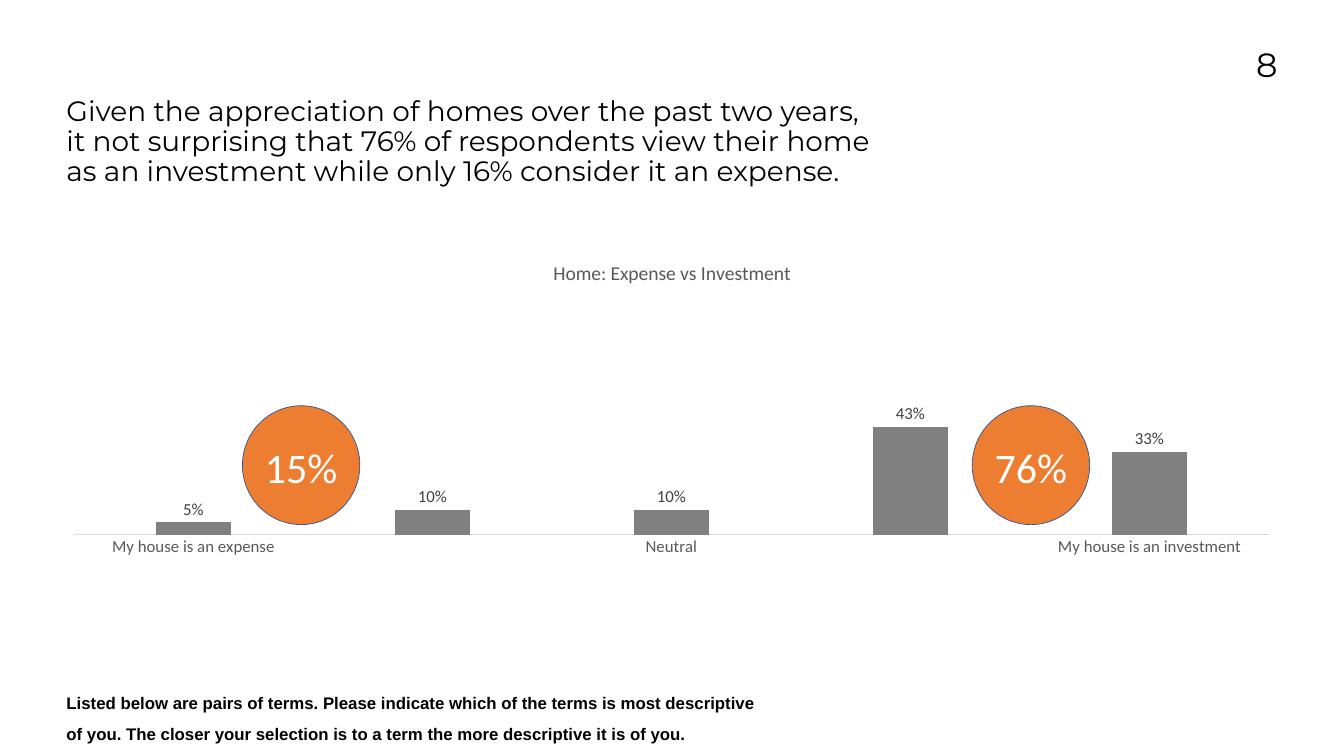
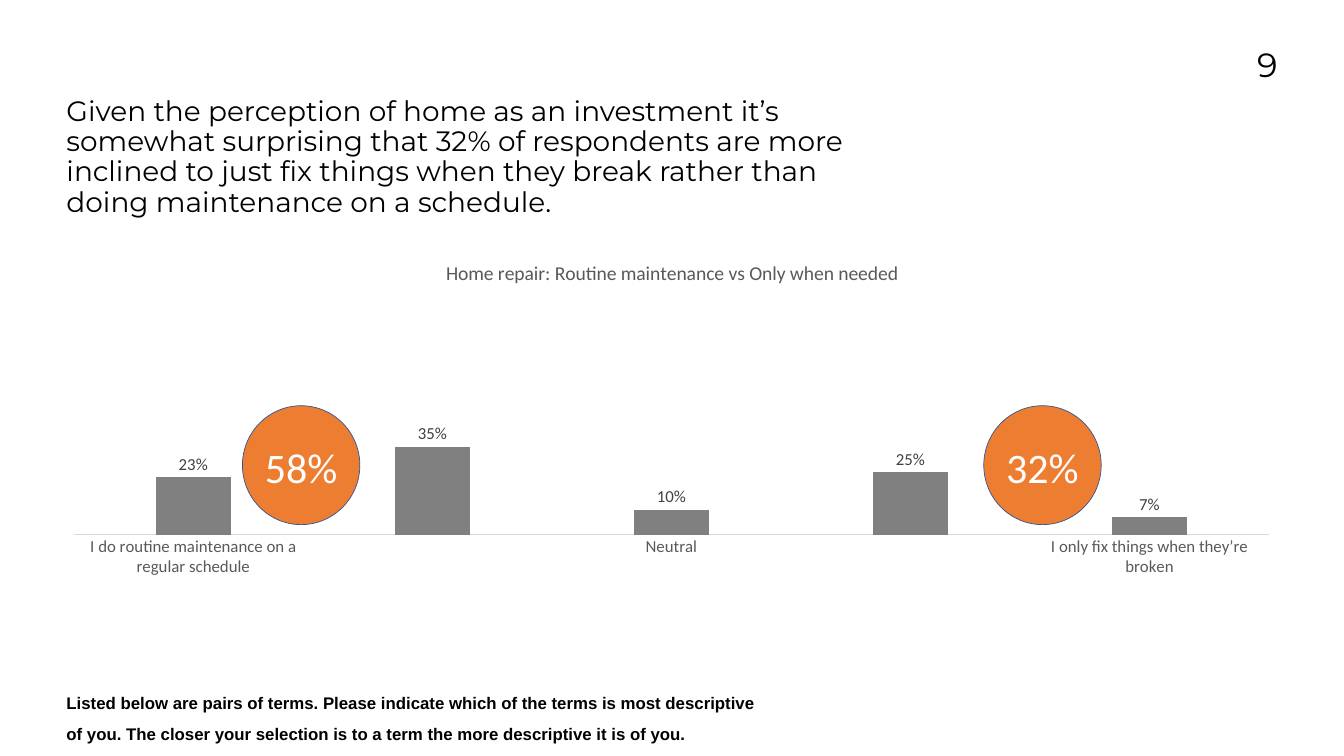
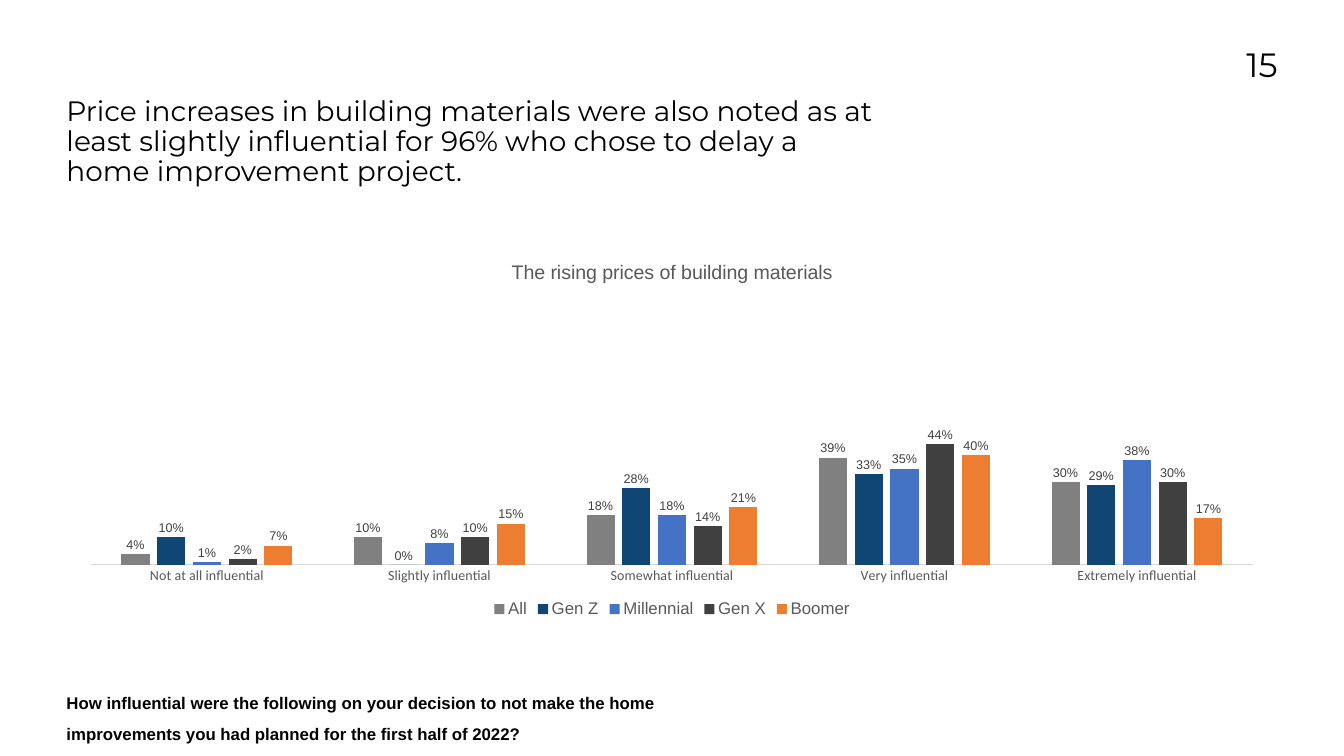
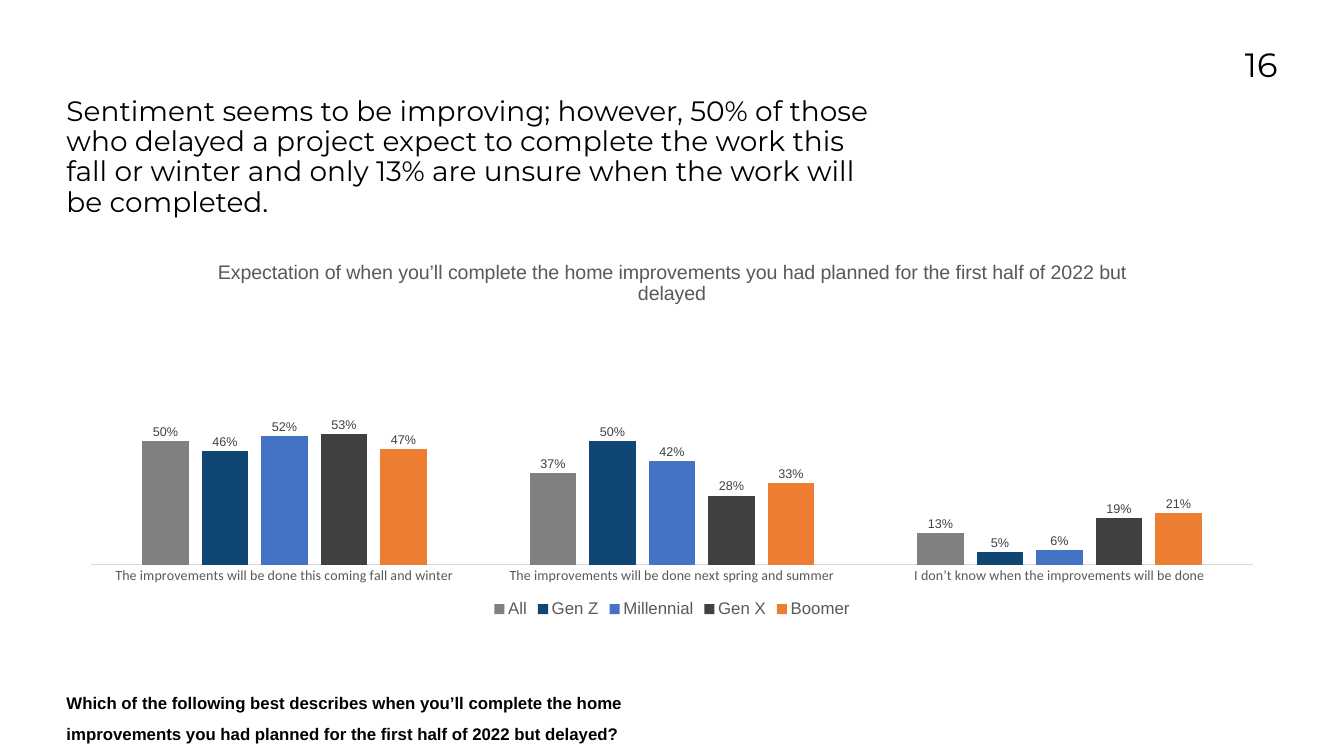
from lxml.etree import SubElement
from pptx import Presentation
from pptx.chart.data import CategoryChartData
from pptx.dml.color import RGBColor
from pptx.enum.chart import XL_CHART_TYPE as ChartType, XL_LABEL_POSITION as LabelPosition
from pptx.enum.chart import XL_LEGEND_POSITION as LegendPosition, XL_TICK_MARK as TickMark
from pptx.enum.shapes import MSO_SHAPE as Shape
from pptx.enum.text import MSO_AUTO_SIZE as AutoSize, PP_ALIGN as Align
from pptx.oxml.ns import qn
from pptx.util import Pt

BLACK, WHITE, ORANGE, NAVY = "000000", "FFFFFF", "ED7D31", "325491"
GREY, TEXT_GREY, LABEL_GREY, AXIS_GREY = "808080", "595959", "404040", "D9D9D9"
GENERATIONS = {"All": GREY, "Gen Z": "104674", "Millennial": "4472C4",
               "Gen X": "404040", "Boomer": ORANGE}

LEFT, RIGHT = 95, 1825
CHART_TOP, CHART_HEIGHT = 351.4, 537.1
CIRCLE_TOP, CIRCLE_WIDTH, CIRCLE_HEIGHT = 579.6, 167.8, 169.9
TOTAL_TOP, TOTAL_WIDTH, TOTAL_HEIGHT = 627.8, 128.9, 79.9

NUMBER_FONT = {"name": "Montserrat", "size": Pt(48), "color": BLACK}
HEADLINE_FONT = {"name": "Montserrat", "size": Pt(40), "color": BLACK}
QUESTION_FONT = {"name": "Arial", "size": Pt(24), "bold": True, "color": BLACK}
TOTAL_FONT = {"name": "Calibri", "size": Pt(60), "color": WHITE}

PAIR_STYLE = {"font": "Calibri", "axis_size": 24, "label_size": 24, "question_width": 986.4}
GENERATION_STYLE = {"font": "Arial", "axis_size": 20, "label_size": 18, "question_width": 955.4}

PAIRS_QUESTION = (
    "Listed below are pairs of terms. Please indicate which of the terms is most descriptive "
    "of you. The closer your selection is to a term the more descriptive it is of you.")

# "plot" is the inner plot area as fractions of the chart: x, y, width, height.
# "totals" pairs each circle's left edge with its text.
SLIDES = [
    {"number": "8", "style": PAIR_STYLE, "plot": (0.006, 0.099, 0.987, 0.669),
     "headline": "Given the appreciation of homes over the past two years, it not surprising "
                 "that 76% of respondents view their home as an investment while only 16% "
                 "consider it an expense.",
     "title": "Home: Expense vs Investment",
     "categories": ["My house is an expense", "", "Neutral", "", "My house is an investment"],
     "series": [("Series 1", GREY, [0.05, 0.1, 0.1, 0.43, 0.33])],
     "totals": [(346.3, "15%"), (1388.9, "76%")],
     "question": PAIRS_QUESTION},
    {"number": "9", "style": PAIR_STYLE, "plot": (0.006, 0.099, 0.987, 0.669),
     "headline": "Given the perception of home as an investment it’s somewhat surprising that "
                 "32% of respondents are more inclined to just fix things when they break "
                 "rather than doing maintenance on a schedule.",
     "title": "Home repair: Routine maintenance vs Only when needed",
     "categories": ["I do routine maintenance on a regular schedule", "", "Neutral", "",
                    "I only fix things when they’re broken"],
     "series": [("Series 1", GREY, [0.23, 0.35, 0.1, 0.25, 0.07])],
     "totals": [(346.3, "58%"), (1405.4, "32%")],
     "question": PAIRS_QUESTION},
    {"number": "15", "style": GENERATION_STYLE, "plot": (0.02, 0.117, 0.96, 0.731),
     "headline": "Price increases in building materials were also noted as at least slightly "
                 "influential for 96% who chose to delay a home improvement project.",
     "title": "The rising prices of building materials",
     "categories": ["Not at all influential", "Slightly influential", "Somewhat influential",
                    "Very influential", "Extremely influential"],
     "series": list(zip(GENERATIONS, GENERATIONS.values(), [
         [0.04, 0.1, 0.18, 0.39, 0.3],
         [0.1, 0, 0.28, 0.33, 0.29],
         [0.01, 0.08, 0.18, 0.35, 0.38],
         [0.02, 0.1, 0.14, 0.44, 0.3],
         [0.07, 0.15, 0.21, 0.4, 0.17]])),
     "totals": [],
     "question": "How influential were the following on your decision to not make the home "
                 "improvements you had planned for the first half of 2022?"},
    {"number": "16", "style": GENERATION_STYLE, "plot": (0.02, 0.191, 0.96, 0.657),
     "headline": "Sentiment seems to be improving; however, 50% of those who delayed a project "
                 "expect to complete the work this fall or winter and only 13% are unsure when "
                 "the work will be completed.",
     "title": "Expectation of when you’ll complete the home improvements you had planned for "
              "the first half of 2022 but delayed",
     "categories": ["The improvements will be done this coming fall and winter",
                    "The improvements will be done next spring and summer",
                    "I don’t know when the improvements will be done"],
     "series": list(zip(GENERATIONS, GENERATIONS.values(), [
         [0.5, 0.37, 0.13],
         [0.46, 0.5, 0.05],
         [0.52, 0.42, 0.06],
         [0.53, 0.28, 0.19],
         [0.47, 0.33, 0.21]])),
     "totals": [],
     "question": "Which of the following best describes when you’ll complete the home "
                 "improvements you had planned for the first half of 2022 but delayed?"},
]


def paint(target, color):
    """Give a fill or a line one solid colour."""
    fill = target if hasattr(target, "solid") else target.fill
    fill.solid()
    fill.fore_color.rgb = RGBColor.from_string(color)


def apply(target, values):
    """Set each attribute; a colour string goes to the font's RGB."""
    for name, value in values.items():
        if name == "color":
            target.color.rgb = RGBColor.from_string(value)
        else:
            setattr(target, name, value)


def add_text(page, place, text, font, paragraph=None, frame=None):
    box = page.shapes.add_textbox(*map(Pt, place))
    margins = dict.fromkeys(("margin_left", "margin_top", "margin_right", "margin_bottom"), 0)
    apply(box.text_frame, {"word_wrap": True, **(margins if frame is None else frame)})
    para = box.text_frame.paragraphs[0]
    apply(para, paragraph or {})
    span = para.add_run()
    span.text = text
    apply(span.font, font)


def add_total(page, left, text):
    """Draw a circle with the summed share on top."""
    circle = page.shapes.add_shape(
        Shape.OVAL, *map(Pt, (left, CIRCLE_TOP, CIRCLE_WIDTH, CIRCLE_HEIGHT)))
    circle.shadow.inherit = False
    paint(circle.fill, ORANGE)
    paint(circle.line, NAVY)
    circle.line.width = Pt(1)
    text_left = left + (CIRCLE_WIDTH - TOTAL_WIDTH) / 2
    add_text(page, (text_left, TOTAL_TOP, TOTAL_WIDTH, TOTAL_HEIGHT), text, TOTAL_FONT,
             {"alignment": Align.CENTER}, {"auto_size": AutoSize.SHAPE_TO_FIT_TEXT})


def place_plot(chart, fractions):
    """Fix the inner plot area inside the chart."""
    area = chart.plots[0]._element.getparent()
    for old in area.findall(qn("c:layout")):
        area.remove(old)
    layout = SubElement(area, qn("c:layout"))
    area.insert(0, layout)
    manual = SubElement(layout, qn("c:manualLayout"))
    settings = [("layoutTarget", "inner"), ("xMode", "edge"), ("yMode", "edge"),
                *zip("xywh", fractions)]
    for tag, value in settings:
        SubElement(manual, qn(f"c:{tag}")).set("val", str(value))


def add_column_chart(page, content):
    style = content["style"]
    data = CategoryChartData(number_format="0%")
    data.categories = content["categories"]
    for name, _, values in content["series"]:
        data.add_series(name, values)
    place = (LEFT, CHART_TOP, RIGHT - LEFT, CHART_HEIGHT)
    chart = page.shapes.add_chart(ChartType.COLUMN_CLUSTERED, *map(Pt, place), data).chart
    apply(chart.font, {"name": "Calibri", "size": Pt(style["axis_size"]), "color": BLACK})

    chart.has_title = True
    chart.chart_title.include_in_layout = False
    para = chart.chart_title.text_frame.paragraphs[0]
    span = para.add_run()
    span.text = content["title"]
    apply(span.font, {"name": style["font"], "size": Pt(28), "bold": False, "color": TEXT_GREY})

    apply(chart.value_axis, {"minimum_scale": 0, "maximum_scale": 1,
                             "has_major_gridlines": False, "visible": False})
    axis = chart.category_axis
    apply(axis, {"major_tick_mark": TickMark.NONE, "minor_tick_mark": TickMark.NONE})
    apply(axis.tick_labels.font,
          {"name": "Calibri", "size": Pt(style["axis_size"]), "color": TEXT_GREY})
    paint(axis.format.line, AXIS_GREY)
    axis.format.line.width = Pt(0.75)

    plot = chart.plots[0]
    apply(plot, {"gap_width": 219, "overlap": -27, "vary_by_categories": False})
    for series, (_, color, _) in zip(plot.series, content["series"]):
        paint(series.format.fill, color)
        labels = series.data_labels
        apply(labels, {"show_value": True, "position": LabelPosition.OUTSIDE_END,
                       "number_format": "0%", "number_format_is_linked": False})
        apply(labels.font, {"name": style["font"], "size": Pt(style["label_size"]),
                            "color": LABEL_GREY})

    chart.has_legend = len(content["series"]) > 1
    if chart.has_legend:
        apply(chart.legend, {"position": LegendPosition.BOTTOM, "include_in_layout": False})
        apply(chart.legend.font, {"name": "Arial", "size": Pt(24), "color": TEXT_GREY})
    place_plot(chart, content["plot"])


def add_page(deck, content):
    page = deck.slides.add_slide(deck.slide_layouts[6])
    add_text(page, (RIGHT - 162, 63.4, 162, 118), content["number"], NUMBER_FONT,
             {"alignment": Align.RIGHT})
    add_column_chart(page, content)
    add_text(page, (LEFT, 139, 1152.7, 149.8), content["headline"], HEADLINE_FONT,
             {"line_spacing": 0.9})
    add_text(page, (LEFT, 975.6, content["style"]["question_width"], 46.8),
             content["question"], QUESTION_FONT, {"line_spacing": 1.5})
    for left, text in content["totals"]:
        add_total(page, left, text)


def main():
    deck = Presentation()
    deck.slide_width, deck.slide_height = Pt(1920), Pt(1080)
    for content in SLIDES:
        add_page(deck, content)
    deck.save("out.pptx")


if __name__ == "__main__":
    main()
